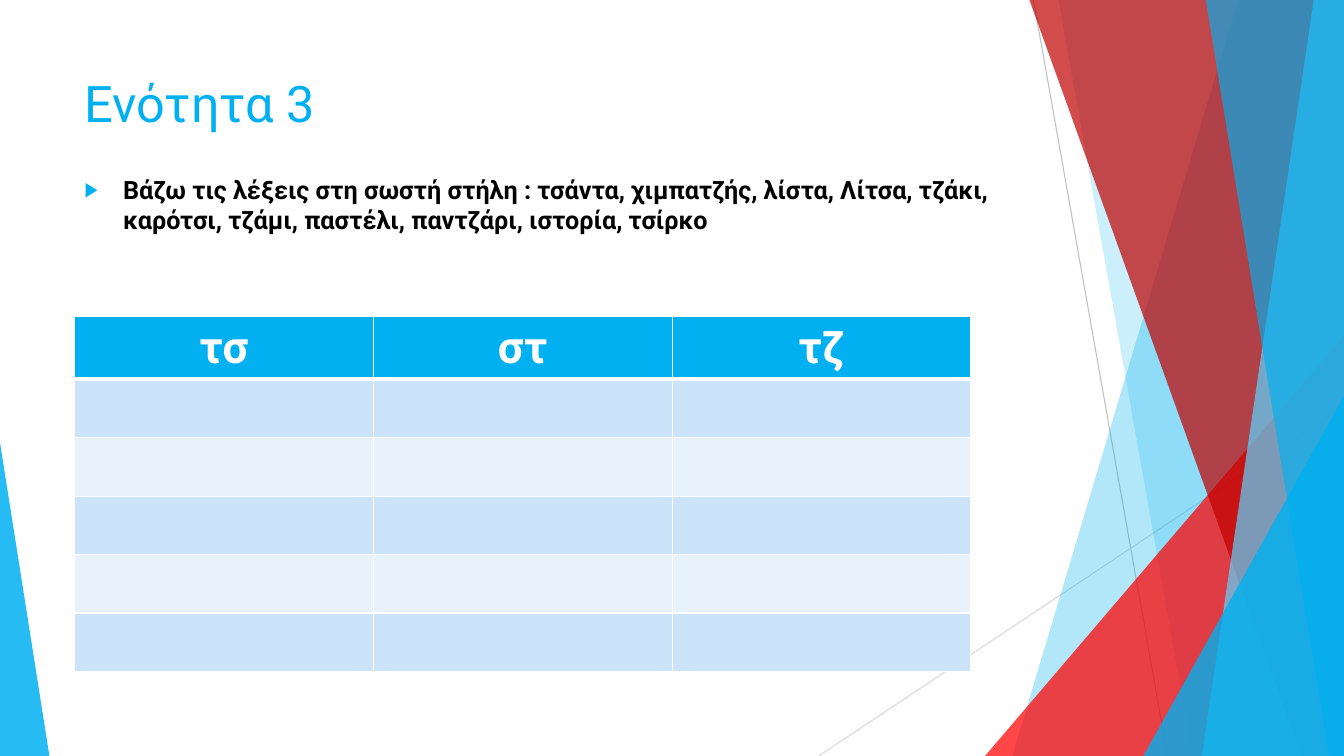
from lxml.etree import SubElement
from pptx import Presentation
from pptx.dml.color import RGBColor
from pptx.enum.shapes import MSO_CONNECTOR, MSO_SHAPE
from pptx.enum.text import MSO_ANCHOR, MSO_AUTO_SIZE, PP_ALIGN
from pptx.oxml import parse_xml
from pptx.oxml.ns import nsdecls, qn
from pptx.util import Inches, Pt

WIDTH, HEIGHT = 13.33, 7.5
FONT = "Roboto"
WHITE = RGBColor(0xFF, 0xFF, 0xFF)
BLACK = RGBColor(0, 0, 0)
BLUE = RGBColor(0x00, 0xB0, 0xF0)
LIGHT_BLUE = RGBColor(0x5D, 0xD4, 0xFF)
RED = RGBColor(0xFF, 0, 0)
DARK_RED = RGBColor(0xBF, 0, 0)
GRAY = RGBColor(0xBF, 0xBF, 0xBF)
PALE_GRAY = RGBColor(0xD9, 0xD9, 0xD9)
BANDS = RGBColor(0xCC, 0xE4, 0xF9), RGBColor(0xE7, 0xF2, 0xFC)

TITLE = "Ενότητα 3"
TASK = ("Βάζω τις λέξεις στη σωστή στήλη : τσάντα, χιμπατζής, λίστα, Λίτσα, τζάκι, "
        "καρότσι, τζάμι, παστέλι, παντζάρι, ιστορία, τσίρκο")
HEADINGS = "τσ", "στ", "τζ"
WORD_ROWS = 5


def inches(*lengths):
    return [Inches(length) for length in lengths]


def tint(shape, color, opacity):
    """Fill without outline or shadow; opacity in percent."""
    shape.shadow.inherit = False
    shape.line.fill.background()
    shape.fill.solid()
    shape.fill.fore_color.rgb = color
    color_node = shape._element.spPr.find(qn("a:solidFill"))[0]
    SubElement(color_node, qn("a:alpha"), val=str(opacity * 1000))


def add_line(page, start, end, color):
    line = page.shapes.add_connector(MSO_CONNECTOR.STRAIGHT, *inches(*start, *end))
    line.line.color.rgb = color
    line.line.width = Pt(0.75)
    SubElement(line._element.spPr, qn("a:effectLst"))


def add_blade(page, top_x, bottom_x, color, opacity):
    """Full-height panel between a slanted left edge and the slide's right edge."""
    builder = page.shapes.build_freeform(*inches(top_x, 0))
    corners = (WIDTH, 0), (WIDTH, HEIGHT), (bottom_x, HEIGHT)
    builder.add_line_segments([inches(*corner) for corner in corners])
    tint(builder.convert_to_shape(), color, opacity)


def add_corner(page, left, top, width, apex, color, opacity):
    """Triangle standing on the bottom edge; apex 0 is left, 1 is right."""
    box = inches(left, top, width, HEIGHT - top)
    corner = page.shapes.add_shape(MSO_SHAPE.ISOSCELES_TRIANGLE, *box)
    corner.adjustments[0] = apex
    tint(corner, color, opacity)


def add_decoration(page):
    add_line(page, (10.25, 0), (11.58, HEIGHT), GRAY)
    add_line(page, (WIDTH, 4.03), (8.12, HEIGHT), PALE_GRAY)
    add_blade(page, 12.28, 10.04, BLUE, 30)
    add_blade(page, 10.5, 11.83, BLUE, 20)
    add_corner(page, 9.77, 3.33, WIDTH - 9.77, 1, RED, 72)
    add_blade(page, 10.21, 12.91, DARK_RED, 70)
    add_blade(page, 13.03, 11.92, LIGHT_BLUE, 70)
    add_blade(page, 11.96, 13.18, BLUE, 65)
    add_corner(page, 11.34, 3.93, WIDTH - 11.34, 1, BLUE, 80)
    add_corner(page, 0, 4.39, 0.49, 0, BLUE, 85)


def fill_placeholder(holder, box, text, size, color, bold=False):
    holder.left, holder.top, holder.width, holder.height = inches(*box)
    frame = holder.text_frame
    frame.text = text
    frame.word_wrap = True
    frame.auto_size = MSO_AUTO_SIZE.NONE
    frame.vertical_anchor = MSO_ANCHOR.TOP
    para = frame.paragraphs[0]
    para.alignment = PP_ALIGN.LEFT
    style_run(para.runs[0], size, color, bold)
    return para


def style_run(run, size, color, bold):
    font = run.font
    font.name, font.size, font.bold = FONT, Pt(size), bold
    font.color.rgb = color


def add_bullet(para):
    para.space_before = Pt(10)
    props = para._p.get_or_add_pPr()
    props.set("marL", str(Inches(0.38)))
    props.set("indent", str(-Inches(0.38)))
    color = SubElement(props, qn("a:buClr"))
    SubElement(color, qn("a:srgbClr"), val=str(BLUE))
    SubElement(props, qn("a:buSzPct"), val="80000")
    SubElement(props, qn("a:buChar"), char="▶")


def style_cell(cell, color, top, bottom):
    """Fill the cell and give it white borders; top and bottom in points."""
    props = cell._tc.get_or_add_tcPr()
    for side, width in zip("LRTB", (1, 1, top, bottom)):
        props.append(parse_xml(
            f'<a:ln{side} {nsdecls("a")} w="{Pt(width)}"><a:solidFill>'
            f'<a:srgbClr val="{WHITE}"/></a:solidFill></a:ln{side}>'))
    cell.fill.solid()
    cell.fill.fore_color.rgb = color


def add_word_table(page, left, top, width, row_height):
    rows = WORD_ROWS + 1
    box = inches(left, top, width, rows * row_height)
    table = page.shapes.add_table(rows, len(HEADINGS), *box).table
    for cell, heading in zip(table.rows[0].cells, HEADINGS):
        style_cell(cell, BLUE, 1, 3)
        cell.text_frame.text = heading
        para = cell.text_frame.paragraphs[0]
        para.alignment = PP_ALIGN.CENTER
        style_run(para.runs[0], 32, WHITE, True)
    for index in range(WORD_ROWS):
        for cell in table.rows[index + 1].cells:
            style_cell(cell, BANDS[index % 2], 1 if index else 3, 1)


def build_exercise(deck):
    page = deck.slides.add_slide(deck.slide_layouts[1])
    add_decoration(page)
    title, body = page.placeholders
    fill_placeholder(title, (0.74, 0.67, 9.4, 1.44), TITLE, 36, BLUE)
    add_bullet(fill_placeholder(body, (0.74, 1.68, 9.4, 4.93), TASK, 18, BLACK, True))
    add_word_table(page, 0.74, 3.14, 8.89, 0.58)


def main():
    deck = Presentation()
    deck.slide_width, deck.slide_height = inches(WIDTH, HEIGHT)
    build_exercise(deck)
    deck.save("out.pptx")


if __name__ == "__main__":
    main()
